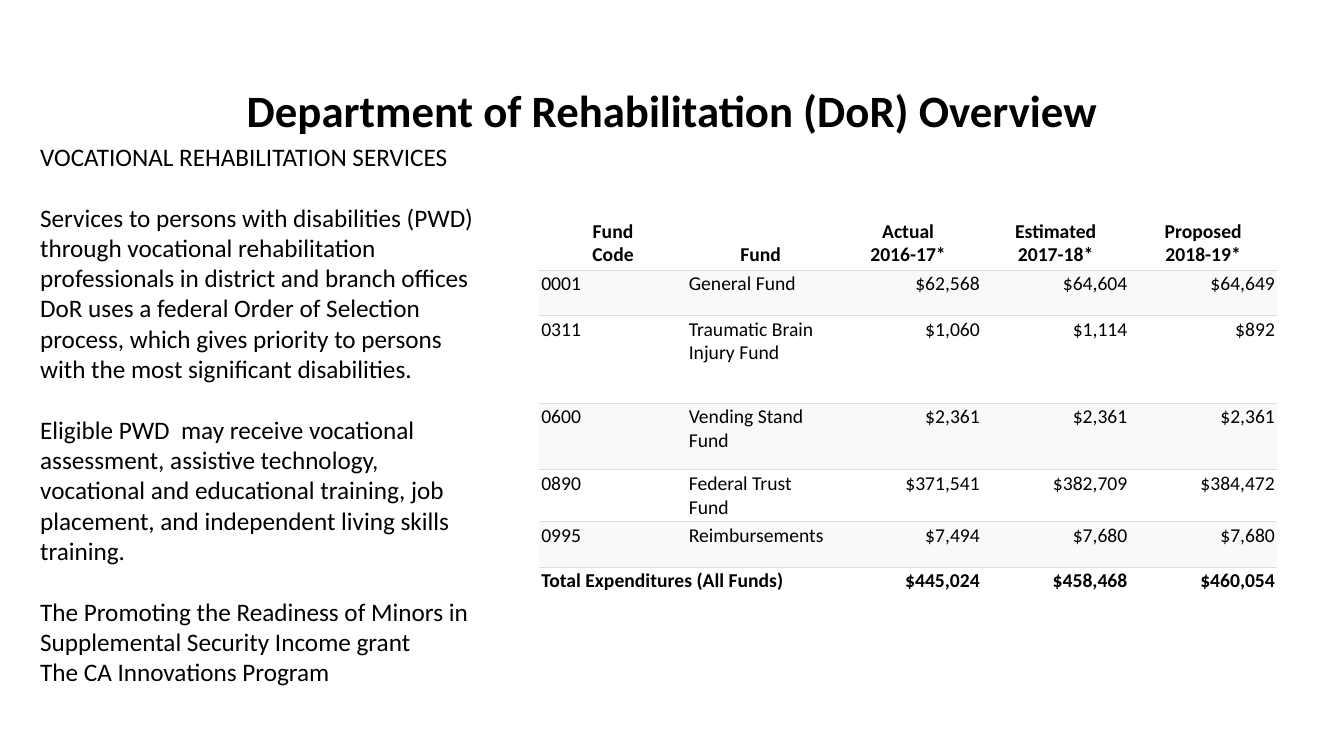
from dataclasses import dataclass
from typing import Any

from lxml.etree import SubElement
from pptx import Presentation
from pptx.dml.color import RGBColor
from pptx.enum.text import MSO_ANCHOR, MSO_AUTO_SIZE, PP_ALIGN
from pptx.oxml.ns import qn
from pptx.util import Pt

INK = "000000"
RULE = "DDDDDD"
BAND = "F9F9F9"
RULE_WIDTH = Pt(0.3)


@dataclass(frozen=True)
class FundRow:
    height: float
    texts: tuple[str, ...]
    bold: bool = False


@dataclass(frozen=True)
class ServiceParagraph:
    text: str
    space_before: float = 0


FUND_ROWS = [
    FundRow(49.68, ("Fund\nCode", "Fund", "Actual\n2016-17*", "Estimated\n2017-18*", "Proposed\n2018-19*"), True),
    FundRow(32.4, ("0001", "General Fund", "$62,568", "$64,604", "$64,649")),
    FundRow(62.64, ("0311", "Traumatic Brain Injury Fund", "$1,060", "$1,114", "$892")),
    FundRow(47.52, ("0600", "Vending Stand Fund", "$2,361", "$2,361", "$2,361")),
    FundRow(32.4, ("0890", "Federal Trust Fund", "$371,541", "$382,709", "$384,472")),
    FundRow(32.4, ("0995", "Reimbursements", "$7,494", "$7,680", "$7,680")),
    FundRow(32.4, ("Total Expenditures (All Funds)", "", "$445,024", "$458,468", "$460,054"), True),
]

SERVICES = [
    ServiceParagraph("VOCATIONAL REHABILITATION SERVICES"),
    ServiceParagraph(
        "Services to persons with disabilities (PWD) through vocational rehabilitation "
        "professionals in district and branch offices DoR uses a federal Order of Selection "
        "process, which gives priority to persons with the most significant disabilities.", 22),
    ServiceParagraph(
        "Eligible PWD  may receive vocational assessment, assistive technology, vocational "
        "and educational training, job placement, and independent living skills training.", 22),
    ServiceParagraph(
        "The Promoting the Readiness of Minors in Supplemental Security Income grant", 22),
    ServiceParagraph("The CA Innovations Program"),
]


def colour(hex_code: str) -> RGBColor:
    return RGBColor.from_string(hex_code)


def apply(target: Any, formats: dict[str, Any]) -> None:
    for name, value in formats.items():
        setattr(target, name, value)


def write(paragraph: Any, text: str, size: float, bold: bool, formats: dict[str, Any]) -> None:
    paragraph.text = text
    apply(paragraph, formats)
    for run in paragraph.runs:
        apply(run.font, {"name": "Calibri", "size": Pt(size), "bold": bold})
        run.font.color.rgb = colour(INK)


def rule_cell(cell: Any, ruled_sides: set[str]) -> None:
    properties = cell._tc.get_or_add_tcPr()
    for side in ("lnL", "lnR", "lnT", "lnB"):
        if side in ruled_sides:
            edge = SubElement(properties, qn(f"a:{side}"), w=str(RULE_WIDTH))
            fill = SubElement(edge, qn("a:solidFill"))
            SubElement(fill, qn("a:srgbClr"), val=RULE)
        else:
            edge = SubElement(properties, qn(f"a:{side}"), w="0")
            SubElement(edge, qn("a:noFill"))


def add_title(slide: Any) -> None:
    title = slide.shapes.title
    apply(title, {"left": Pt(66.24), "top": Pt(28.8), "width": Pt(828), "height": Pt(104.4)})
    apply(title.text_frame, {"vertical_anchor": MSO_ANCHOR.MIDDLE, "word_wrap": True,
                             "auto_size": MSO_AUTO_SIZE.NONE})
    write(title.text_frame.paragraphs[0], "Department of Rehabilitation (DoR) Overview", 32, True,
          {"alignment": PP_ALIGN.CENTER, "line_spacing": 0.9})


def add_funds(slide: Any) -> None:
    column_count = len(FUND_ROWS[0].texts)
    last = len(FUND_ROWS) - 1
    funds = slide.shapes.add_table(len(FUND_ROWS), column_count, Pt(385.2), Pt(143.28),
                                   Pt(527.04), Pt(sum(row.height for row in FUND_ROWS))).table
    apply(funds, {"first_row": False, "horz_banding": False})
    for row_index, fund_row in enumerate(FUND_ROWS):
        funds.rows[row_index].height = Pt(fund_row.height)
        is_header = row_index == 0
        side_inset, end_inset = (Pt(4.32), Pt(2.16)) if is_header else (Pt(1.44), Pt(1.44))
        ruled_sides = ({"lnT"} if row_index > 0 else set()) | ({"lnB"} if row_index < last else set())
        for column_index, text in enumerate(fund_row.texts):
            cell = funds.cell(row_index, column_index)
            apply(cell, {
                "margin_left": side_inset, "margin_right": side_inset,
                "margin_top": end_inset, "margin_bottom": end_inset,
                "vertical_anchor": MSO_ANCHOR.BOTTOM if is_header else MSO_ANCHOR.TOP,
            })
            body_alignment = PP_ALIGN.RIGHT if column_index > 1 else PP_ALIGN.LEFT
            write(cell.text_frame.paragraphs[0], text, 14, fund_row.bold,
                  {"alignment": PP_ALIGN.CENTER if is_header else body_alignment})
            rule_cell(cell, ruled_sides)
            if row_index % 2 and row_index < last:
                cell.fill.solid()
                cell.fill.fore_color.rgb = colour(BAND)
            else:
                cell.fill.background()
    funds.cell(last, 0).merge(funds.cell(last, 1))


def add_services(slide: Any) -> None:
    frame = slide.shapes.add_textbox(Pt(21.6), Pt(97.2), Pt(329.76), Pt(399.6)).text_frame
    apply(frame, {"word_wrap": True, "auto_size": MSO_AUTO_SIZE.SHAPE_TO_FIT_TEXT})
    for index, service in enumerate(SERVICES):
        paragraph = frame.add_paragraph() if index else frame.paragraphs[0]
        write(paragraph, service.text, 18, False,
              {"alignment": PP_ALIGN.LEFT, "space_before": Pt(service.space_before)})


def main() -> None:
    presentation = Presentation()
    apply(presentation, {"slide_width": Pt(960), "slide_height": Pt(540)})
    slide = presentation.slides.add_slide(presentation.slide_layouts[5])
    add_title(slide)
    add_funds(slide)
    add_services(slide)
    presentation.save("out.pptx")


if __name__ == "__main__":
    main()
